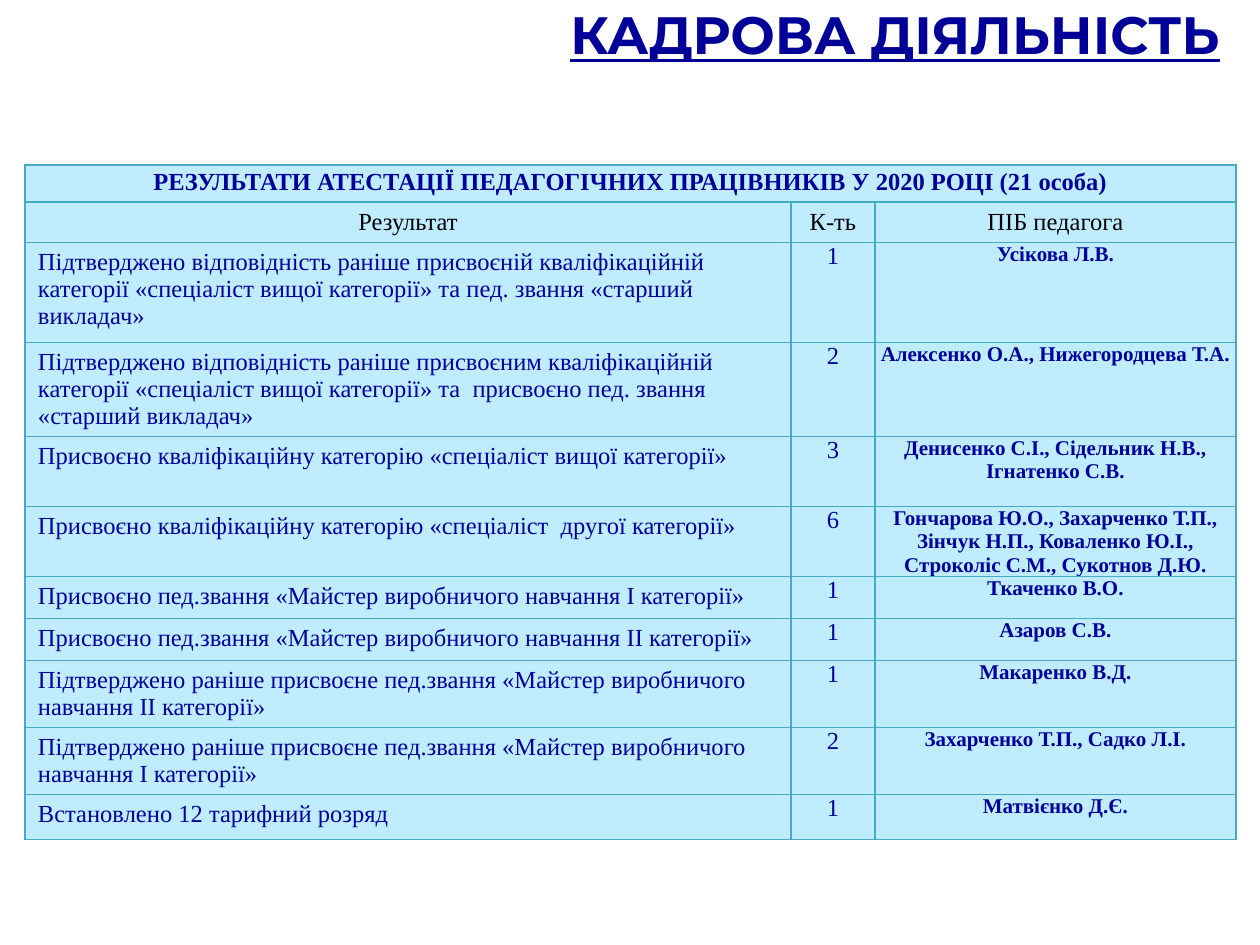
"""Builds the slide with the 2020 staff certification results."""
from lxml import etree
from pptx import Presentation, util as u
from pptx.dml.color import RGBColor
from pptx.enum import text
from pptx.oxml.ns import qn

PX = 914400 // 126
NAVY = RGBColor(0x00, 0x00, 0x99)
BLACK = RGBColor(0, 0, 0)
WHITE = RGBColor(0xFF, 0xFF, 0xFF)
SKY = RGBColor(0xBF, 0xED, 0xFF)
TEAL = RGBColor(0x46, 0xAA, 0xC5)
SERIF = "Times New Roman"
LEFT, CENTER = text.PP_ALIGN.LEFT, text.PP_ALIGN.CENTER

TITLE = "КАДРОВА ДІЯЛЬНІСТЬ"
CAPTION = "РЕЗУЛЬТАТИ АТЕСТАЦІЇ ПЕДАГОГІЧНИХ ПРАЦІВНИКІВ У 2020 РОЦІ (21 особа)"
HEADINGS = ("Результат", "К-ть", "ПІБ педагога")
RESULTS = [
    ("Підтверджено відповідність раніше присвоєній кваліфікаційній категорії "
     "«спеціаліст вищої категорії» та пед. звання «старший викладач»",
     "1", "Усікова Л.В."),
    ("Підтверджено відповідність раніше присвоєним кваліфікаційній категорії "
     "«спеціаліст вищої категорії» та  присвоєно пед. звання «старший викладач»",
     "2", "Алексенко О.А., Нижегородцева Т.А."),
    ("Присвоєно кваліфікаційну категорію «спеціаліст вищої категорії»",
     "3", "Денисенко С.І., Сідельник Н.В., Ігнатенко С.В."),
    ("Присвоєно кваліфікаційну категорію «спеціаліст  другої категорії»",
     "6", "Гончарова Ю.О., Захарченко Т.П., Зінчук Н.П., Коваленко Ю.І., "
     "Строколіс С.М., Сукотнов Д.Ю."),
    ("Присвоєно пед.звання «Майстер виробничого навчання І категорії»",
     "1", "Ткаченко В.О."),
    ("Присвоєно пед.звання «Майстер виробничого навчання ІІ категорії»",
     "1", "Азаров С.В."),
    ("Підтверджено раніше присвоєне пед.звання «Майстер виробничого навчання "
     "ІІ категорії»", "1", "Макаренко В.Д."),
    ("Підтверджено раніше присвоєне пед.звання «Майстер виробничого навчання "
     "І категорії»", "2", "Захарченко Т.П., Садко Л.І."),
    ("Встановлено 12 тарифний розряд", "1", "Матвієнко Д.Є."),
]
COLUMN_WIDTHS = (766, 84, 361)
ROW_HEIGHTS = (37, 41, 100, 94, 70, 70, 42, 42, 67, 67, 45)


def style_text(para, font_name, size, color, bold, align):
    para.alignment = align
    for span in para.runs:
        font = span.font
        font.name, font.size, font.bold = font_name, u.Pt(size), bold
        font.color.rgb = color


def style_cell(cell):
    properties = cell._tc.get_or_add_tcPr()
    for side in ("a:lnL", "a:lnR", "a:lnT", "a:lnB"):
        line = etree.SubElement(properties, qn(side), w=str(u.Pt(0.75)))
        fill = etree.SubElement(line, qn("a:solidFill"))
        etree.SubElement(fill, qn("a:srgbClr"), val=str(TEAL))
    cell.fill.solid()
    cell.fill.fore_color.rgb = SKY


def write_cell(cell, words, size=14, color=NAVY, bold=False, align=CENTER,
               anchor=text.MSO_ANCHOR.TOP, margins=(13, 6)):
    cell.text_frame.text = words
    cell.vertical_anchor = anchor
    cell.margin_left = cell.margin_right = margins[0] * PX
    cell.margin_top = cell.margin_bottom = margins[1] * PX
    style_text(cell.text_frame.paragraphs[0], SERIF, size, color, bold, align)


def add_title(page):
    title = page.shapes.title
    title.left, title.top, title.width, title.height = (
        n * PX for n in (530, 0, 730, 76))
    title.fill.solid()
    title.fill.fore_color.rgb = WHITE
    frame = title.text_frame
    frame.text = TITLE
    frame.word_wrap = True
    frame.auto_size = text.MSO_AUTO_SIZE.NONE
    frame.vertical_anchor = text.MSO_ANCHOR.MIDDLE
    para = frame.paragraphs[0]
    para.line_spacing = 0.9
    style_text(para, "Montserrat", 30, NAVY, True, CENTER)
    para.runs[0].font.underline = True


def add_results(page):
    table = page.shapes.add_table(
        len(ROW_HEIGHTS), len(COLUMN_WIDTHS), 25 * PX, 165 * PX,
        sum(COLUMN_WIDTHS) * PX, sum(ROW_HEIGHTS) * PX).table
    for column, width in zip(table.columns, COLUMN_WIDTHS):
        column.width = width * PX
    for row, height in zip(table.rows, ROW_HEIGHTS):
        row.height = height * PX
    for cell in table.iter_cells():
        style_cell(cell)

    middle = text.MSO_ANCHOR.MIDDLE
    caption = table.cell(0, 0)
    caption.merge(table.cell(0, len(COLUMN_WIDTHS) - 1))
    write_cell(caption, CAPTION, bold=True, anchor=middle)
    caption.text_frame.paragraphs[0].line_spacing = 0.9
    for column, heading in enumerate(HEADINGS):
        write_cell(table.cell(1, column), heading, color=BLACK, anchor=middle)
    for row, (result, count, names) in enumerate(RESULTS, start=2):
        write_cell(table.cell(row, 0), result, align=LEFT)
        write_cell(table.cell(row, 1), count, margins=(5, 0))
        write_cell(table.cell(row, 2), names, size=12, bold=True, margins=(5, 0))


def main():
    deck = Presentation()
    deck.slide_width, deck.slide_height = 1260 * PX, 945 * PX
    page = deck.slides.add_slide(deck.slide_layouts[5])
    add_title(page)
    add_results(page)
    deck.save("out.pptx")


if __name__ == "__main__":
    main()
